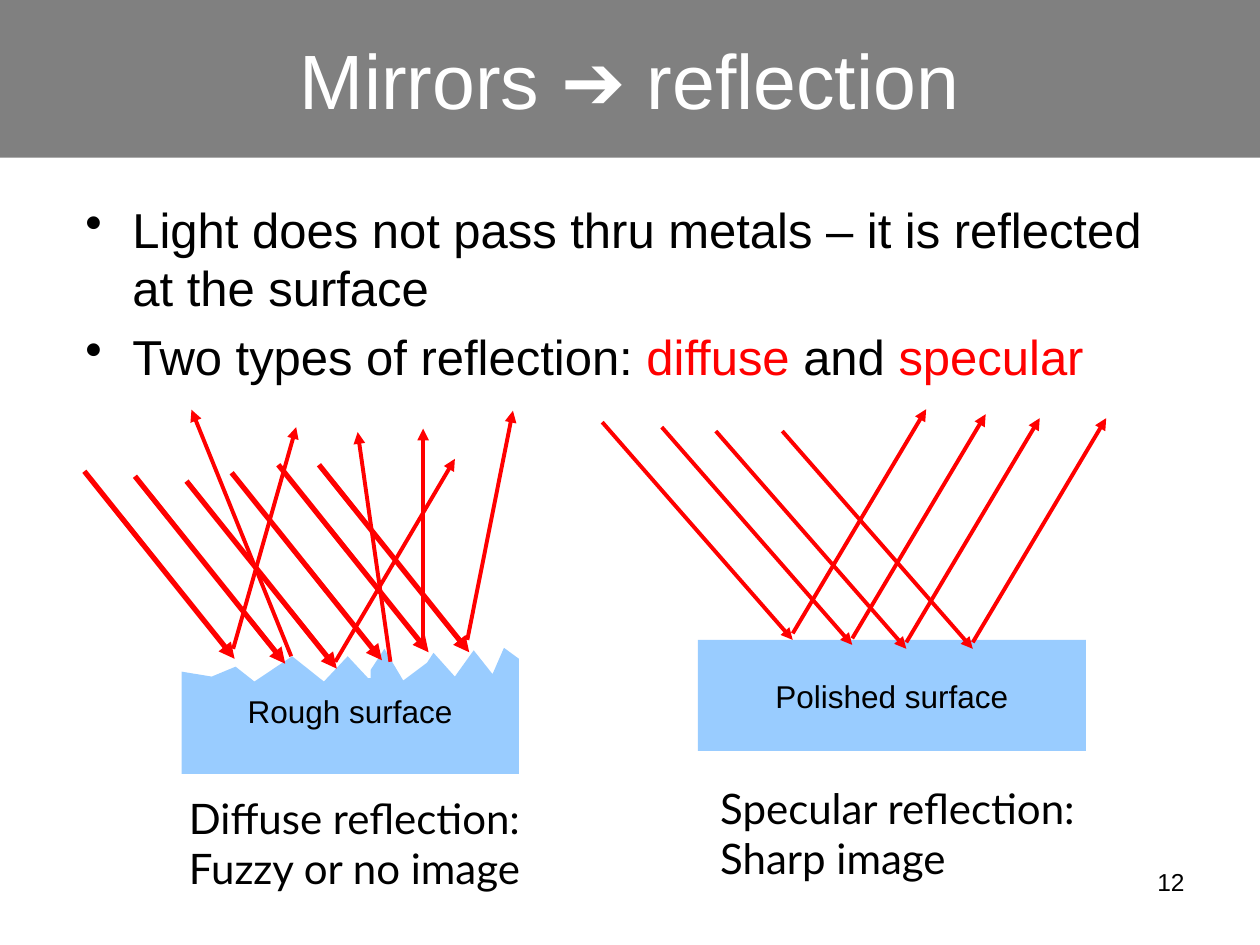
from dataclasses import dataclass
from typing import NamedTuple

from lxml import etree
from pptx import Presentation, util as u
from pptx.dml.color import RGBColor
from pptx.enum import shapes, text
from pptx.oxml.ns import qn


@dataclass(frozen=True)
class Theme:
    sans: str = "Arial"
    hand: str = "Lato"
    black: str = "000000"
    white: str = "FFFFFF"
    gray: str = "808080"
    red: str = "FF0000"
    blue: str = "99CCFF"
    title: int = 44
    body: int = 28
    note: int = 24
    label: int = 18
    page: int = 14
    thick: float = 3
    thin: float = 2.25


class Box(NamedTuple):
    x: float
    y: float
    w: float
    h: float

    def cm(self) -> list:
        return [u.Cm(v) for v in self]


class Ray(NamedTuple):
    x: float
    y: float
    to_x: float
    to_y: float
    width: float


T = Theme()
LEFT, MID, RIGHT = text.PP_ALIGN.LEFT, text.PP_ALIGN.CENTER, text.PP_ALIGN.RIGHT

ROUGH = [
    (10.46, 13.28), (10.46, 15.6), (3.66, 15.6), (3.66, 13.54),
    (4.27, 13.64), (4.75, 13.44), (5.13, 13.74), (5.89, 13.23),
    (6.53, 13.74), (7.01, 13.23), (7.28, 13.52), (7.42, 13.67),
    (7.47, 13.67), (7.47, 13.51), (7.75, 13.08), (8.13, 13.72),
    (8.61, 13.36), (8.74, 13.16), (9.17, 13.64), (9.55, 13.11),
    (9.93, 13.59), (10.16, 13.06),
]
FUZZY_IN = [(1.7, 9.5), (2.72, 9.6), (3.76, 9.7), (4.67, 9.53), (5.61, 9.37), (6.43, 9.37)]
FUZZY_OUT = [
    (4.7, 13.08, 5.97, 8.61), (5.87, 13.23, 3.86, 8.26),
    (6.76, 13.34, 9.17, 9.25), (7.87, 13.34, 7.21, 8.71),
    (8.53, 13.03, 8.53, 8.64), (9.42, 12.9, 10.34, 8.28),
]
SHARP_IN = [(12.14, 8.51), (13.34, 8.61), (14.43, 8.69), (15.77, 8.69)]


def write(shape, lines: list, *, size: float, color: str = T.black, font: str = T.sans,
          align=LEFT, anchor=text.MSO_ANCHOR.TOP, wrap: bool = True,
          bullet: bool = False) -> None:
    frame = shape.text_frame
    frame.word_wrap = wrap
    frame.vertical_anchor = anchor
    for i, line in enumerate(lines):
        para = frame.paragraphs[0] if i == 0 else frame.add_paragraph()
        para.alignment = align
        if bullet:
            para.space_before = u.Pt(size * 0.2)
            props = para._p.get_or_add_pPr()
            props.set("marL", str(u.Cm(0.95)))
            props.set("indent", str(u.Cm(-0.95)))
            etree.SubElement(props, qn("a:buChar")).set("char", "•")
        for part in [line] if isinstance(line, str) else line:
            words, tint = (part, color) if isinstance(part, str) else part
            run = para.add_run()
            run.text = words
            run.font.size = u.Pt(size)
            run.font.name = font
            run.font.color.rgb = RGBColor.from_string(tint)


def paint(shape, color: str) -> None:
    shape.shadow.inherit = False
    shape.fill.solid()
    shape.fill.fore_color.rgb = RGBColor.from_string(color)
    shape.line.fill.background()


def block(pool, box: Box, color: str):
    shape = pool.add_shape(shapes.MSO_SHAPE.RECTANGLE, *box.cm())
    paint(shape, color)
    return shape


def outline(pool, points: list, color: str):
    first, *rest = [(u.Cm(x), u.Cm(y)) for x, y in points]
    pen = pool.build_freeform(*first)
    pen.add_line_segments(rest, close=True)
    shape = pen.convert_to_shape()
    paint(shape, color)
    return shape


def arrow(pool, ray: Ray) -> None:
    ends = [u.Cm(v) for v in ray[:4]]
    line = pool.add_connector(shapes.MSO_CONNECTOR.STRAIGHT, *ends)
    line.line.color.rgb = RGBColor.from_string(T.red)
    line.line.width = u.Pt(ray.width)
    tip = etree.SubElement(line.line._get_or_add_ln(), qn("a:tailEnd"))
    tip.set("type", "triangle")
    etree.SubElement(line._element.spPr, qn("a:effectLst"))


def diffuse(pool) -> None:
    base = outline(pool, ROUGH, T.blue)
    write(base, ["Rough surface"], size=T.label, align=MID, anchor=text.MSO_ANCHOR.MIDDLE)
    for x, y in FUZZY_IN:
        arrow(pool, Ray(x, y, x + 3.03, y + 3.78, T.thick))
    for ends in FUZZY_OUT:
        arrow(pool, Ray(*ends, T.thin))


def specular(pool) -> None:
    base = block(pool, Box(14.07, 12.9, 7.82, 2.24), T.blue)
    write(base, ["Polished surface"], size=T.label, align=MID,
          anchor=text.MSO_ANCHOR.MIDDLE, wrap=False)
    for x, y in SHARP_IN:
        hit_x, hit_y = x + 3.84, y + 4.39
        arrow(pool, Ray(x, y, hit_x, hit_y, T.thin))
        top = hit_y - 0.13
        arrow(pool, Ray(hit_x, top, hit_x + 2.69, top - 4.52, T.thin))


def main() -> None:
    deck = Presentation()
    deck.slide_width, deck.slide_height = u.Cm(25.4), u.Cm(19.05)
    pool = deck.slides.add_slide(deck.slide_layouts[6]).shapes

    page = pool.add_textbox(*Box(18.21, 17.35, 5.92, 1.32).cm())
    write(page, ["12"], size=T.page, align=RIGHT)
    head = block(pool, Box(0, 0, 25.4, 3.18), T.gray)
    write(head, ["Mirrors ➔ reflection"], size=T.title, color=T.white, align=MID,
          anchor=text.MSO_ANCHOR.MIDDLE)
    body = pool.add_textbox(*Box(1.47, 3.89, 22.86, 4.78).cm())
    write(body, [
        "Light does not pass thru metals – it is reflected at the surface",
        ["Two types of reflection: ", ("diffuse", T.red), " and ", ("specular", T.red)],
    ], size=T.body, bullet=True)

    diffuse(pool.add_group_shape().shapes)
    specular(pool.add_group_shape().shapes)

    notes = [
        (Box(3.56, 15.85, 7.34, 2.29), ["Diffuse reflection:", "Fuzzy or no image"]),
        (Box(14.27, 15.65, 7.72, 2.29), ["Specular reflection:", "Sharp image"]),
    ]
    for box, lines in notes:
        write(pool.add_textbox(*box.cm()), lines, size=T.note, font=T.hand, wrap=False)

    deck.save("out.pptx")


if __name__ == "__main__":
    main()
